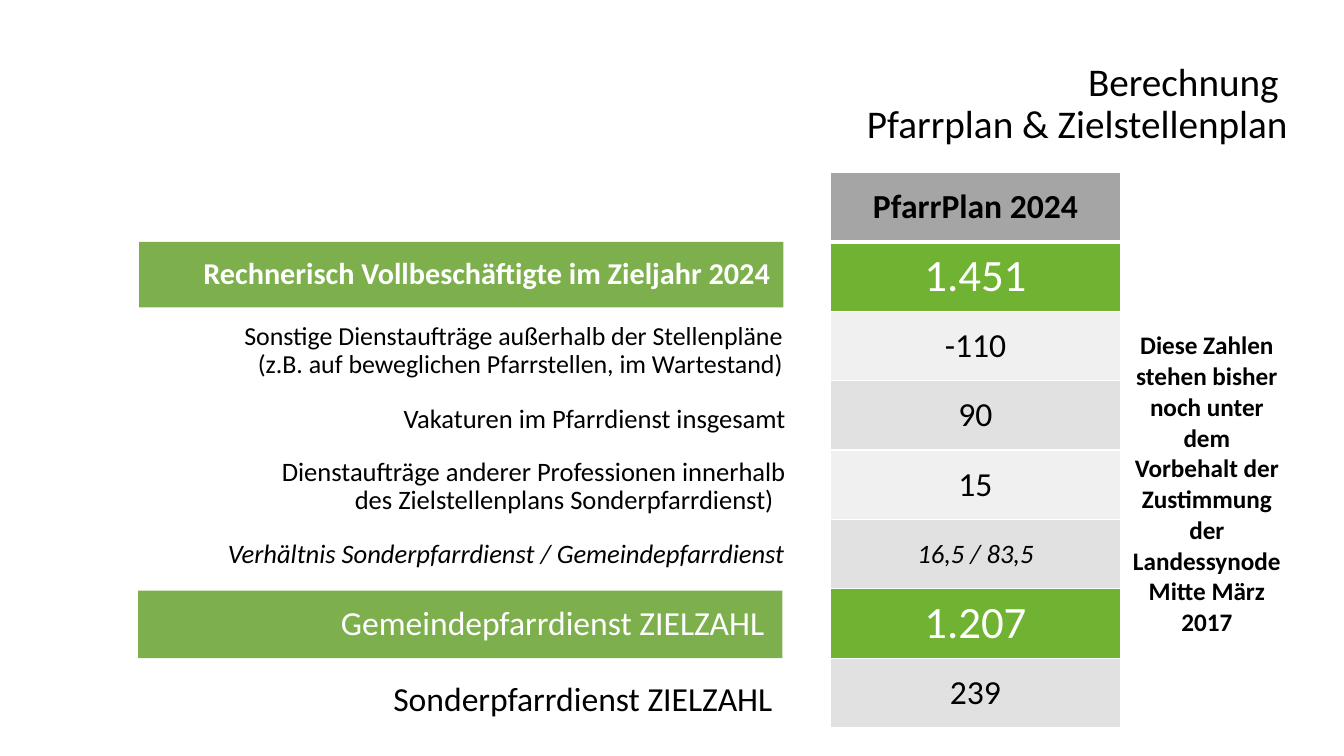
from lxml import etree
from pptx import Presentation
from pptx.dml.color import RGBColor
from pptx.enum.shapes import MSO_SHAPE as SHAPE
from pptx.enum.text import MSO_ANCHOR as ANCHOR, PP_ALIGN as ALIGN
from pptx.oxml import parse_xml
from pptx.oxml.ns import nsdecls, qn
from pptx.util import Emu, Inches, Pt

FONT = "Calibri"
BLACK, WHITE = "000000", "FFFFFF"
BAR_GREEN, CELL_GREEN, HEAD_GRAY = "559815", "70B231", "A5A5A5"
LIGHT, DARK = "F0F0F0", "E1E1E1"

# text, box (left, top, width, height), size, fill, style, right indent of last line
LABELS = [
    ("Rechnerisch Vollbeschäftigte im Zieljahr 2024",
     (1.38, 2.4, 6.39, 0.65), 21.6, BAR_GREEN, "b", 0.03),
    ("Sonstige Dienstaufträge außerhalb der Stellenpläne\n"
     "(z.B. auf beweglichen Pfarrstellen, im Wartestand)",
     (1.49, 3.11, 6.37, 0.74), 18.5, WHITE, "", 0),
    ("Vakaturen im Pfarrdienst insgesamt",
     (1.52, 3.85, 6.37, 0.63), 19, WHITE, "", 0),
    ("Dienstaufträge anderer Professionen innerhalb\n"
     "des Zielstellenplans Sonderpfarrdienst)",
     (1.52, 4.46, 6.37, 0.74), 19, WHITE, "", 0.12),
    ("Verhältnis Sonderpfarrdienst / Gemeindepfarrdienst",
     (1.07, 5.2, 6.81, 0.61), 19, WHITE, "i", 0),
    ("Gemeindepfarrdienst ZIELZAHL",
     (1.37, 5.86, 6.39, 0.67), 24, BAR_GREEN, "", 0.08),
    ("Sonderpfarrdienst ZIELZAHL",
     (1.39, 6.58, 6.37, 0.74), 24, WHITE, "", 0),
]

# text, size, fill, style
FIGURES = [
    ("PfarrPlan 2024", 24, HEAD_GRAY, "b"),
    ("1.451", 32, CELL_GREEN, ""),
    ("-110", 24, LIGHT, ""),
    ("90", 24, DARK, ""),
    ("15", 24, LIGHT, ""),
    ("16,5 / 83,5", 19, DARK, "i"),
    ("1.207", 32, CELL_GREEN, ""),
    ("239", 24, DARK, ""),
]
NOTE = ("Diese Zahlen stehen bisher noch unter dem Vorbehalt der "
        "Zustimmung der Landessynode Mitte März 2017")


def rgb(color):
    return RGBColor.from_string(color)


def inches(box):
    return [Inches(v) for v in box]


def format_text(tf, size, color, align, style="", spacing=None):
    for p in tf.paragraphs:
        p.alignment = align
        p.line_spacing = spacing
        for r in p.runs:
            r.font.name, r.font.size = FONT, Pt(size)
            r.font.color.rgb = rgb(color)
            r.font.bold, r.font.italic = "b" in style, "i" in style


def add_heading(slide, box):
    title = slide.shapes.title
    title.left, title.top, title.width, title.height = inches(box)
    tf = title.text_frame
    tf.text = "Berechnung \vPfarrplan & Zielstellenplan"
    tf.word_wrap = True
    tf.vertical_anchor = ANCHOR.MIDDLE
    format_text(tf, 28, BLACK, ALIGN.RIGHT, spacing=0.9)


def add_label(slide, text, box, size, fill, style, indent):
    sp = slide.shapes.add_shape(SHAPE.RECTANGLE, *inches(box))
    sp.shadow.inherit = False
    sp.line.fill.background()
    sp.fill.solid()
    sp.fill.fore_color.rgb = rgb(fill)
    # Fill opacity of 76 %
    clr = sp.fill._xPr.find(qn("a:solidFill"))[0]
    etree.SubElement(clr, qn("a:alpha")).set("val", "76000")
    tf = sp.text_frame
    tf.text = text
    tf.word_wrap = True
    tf.vertical_anchor = ANCHOR.MIDDLE
    color = BLACK if fill == WHITE else WHITE
    format_text(tf, size, color, ALIGN.RIGHT, style, 0.9)
    if indent:
        pPr = tf.paragraphs[-1]._p.get_or_add_pPr()
        pPr.set("marR", str(Inches(indent)))


def set_borders(cell, bottom):
    tcPr = cell._tc.get_or_add_tcPr()
    for i, side in enumerate(("L", "R", "T", "B")):
        width = Pt(bottom if side == "B" else 1)
        tcPr.insert(i, parse_xml(
            f'<a:ln{side} {nsdecls("a")} w="{width}"><a:solidFill>'
            f'<a:srgbClr val="{WHITE}"/></a:solidFill></a:ln{side}>'))


def fill_cell(cell, text, size, color, style):
    cell.text = text
    cell.vertical_anchor = ANCHOR.MIDDLE
    format_text(cell.text_frame, size, color, ALIGN.CENTER, style)


def add_figures(slide, box, first_col):
    left, top, width, height = inches(box)
    rows = len(FIGURES)
    table = slide.shapes.add_table(rows, 2, left, top, width, height).table
    table.first_row = table.horz_banding = False
    table.columns[0].width = Inches(first_col)
    table.columns[1].width = Emu(width - Inches(first_col))
    for i, (text, size, fill, style) in enumerate(FIGURES):
        for cell in table.rows[i].cells:
            cell.fill.background()
            set_borders(cell, 3 if i == 0 else 1)
        cell = table.cell(i, 0)
        cell.fill.solid()
        cell.fill.fore_color.rgb = rgb(fill)
        fill_cell(cell, text, size, WHITE if fill == CELL_GREEN else BLACK, style)
    # Note beside all rows below the header
    note = table.cell(1, 1)
    note.merge(table.cell(rows - 1, 1))
    fill_cell(note, NOTE, 18, BLACK, "b")


def main():
    prs = Presentation()
    prs.slide_width, prs.slide_height = Inches(13.33), Inches(7.5)
    slide = prs.slides.add_slide(prs.slide_layouts[5])
    add_heading(slide, (4.82, 0.57, 8.05, 0.94))
    for label in LABELS:
        add_label(slide, *label)
    add_figures(slide, (8.24, 1.71, 4.59, 5.51), 2.87)
    prs.save("out.pptx")


if __name__ == "__main__":
    main()
